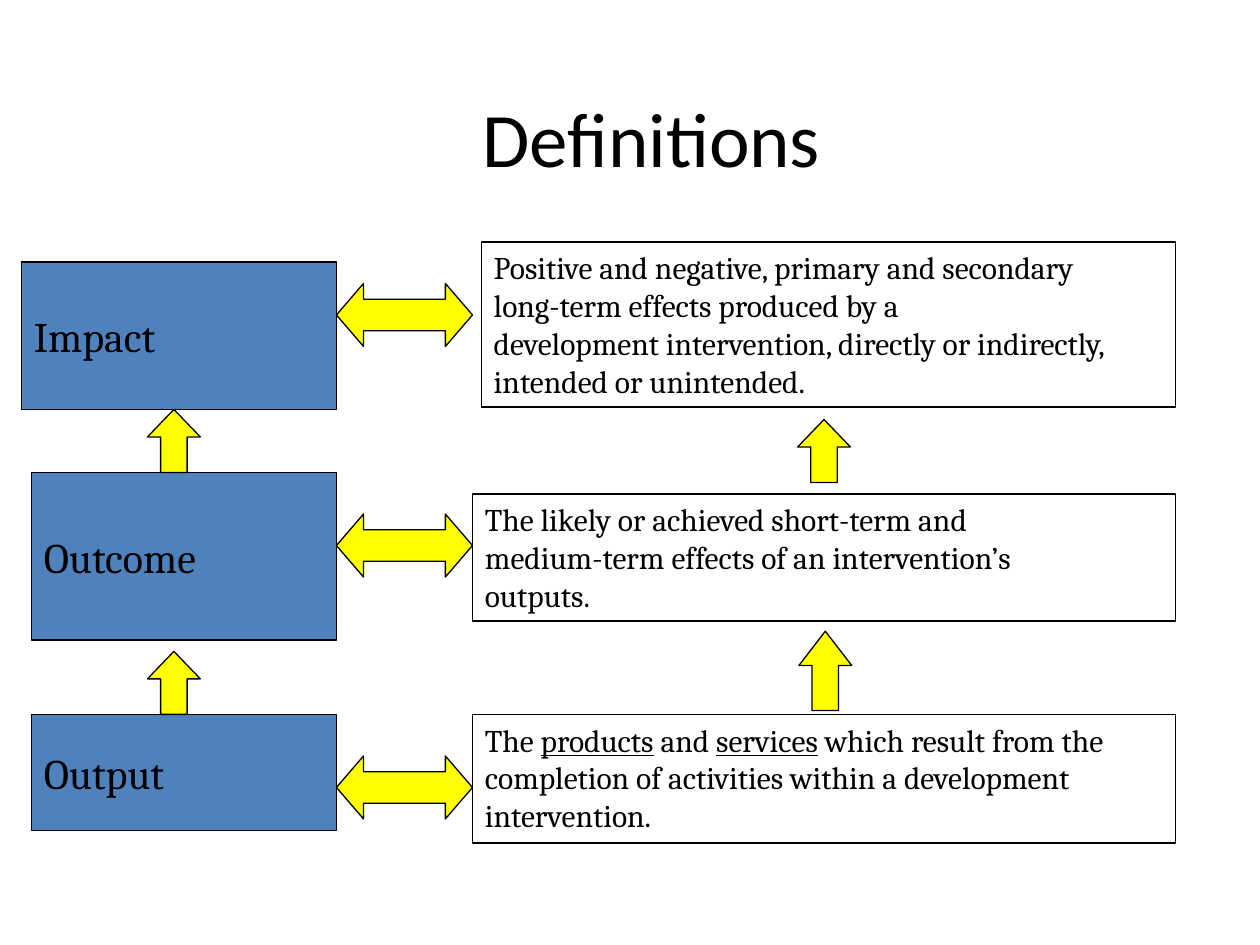
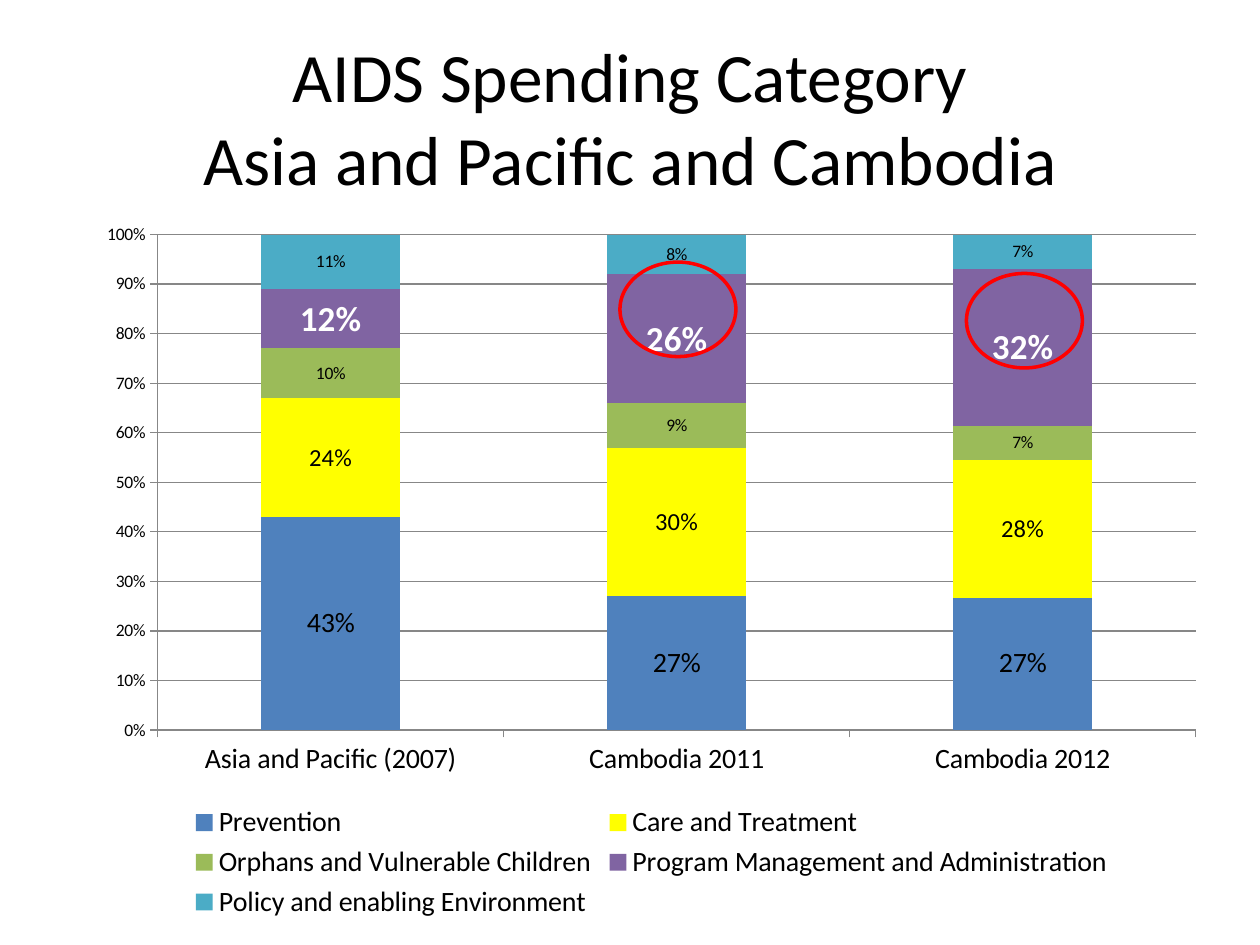
from pptx import Presentation
from pptx.chart.data import CategoryChartData
from pptx.dml.color import RGBColor
from pptx.enum.chart import XL_CHART_TYPE, XL_LEGEND_POSITION, XL_TICK_MARK
from pptx.enum.shapes import MSO_SHAPE
from pptx.enum.text import MSO_ANCHOR, MSO_AUTO_SIZE, PP_ALIGN
from pptx.util import Pt

PX = 9144
HEX = {
    "black": "000000", "white": "FFFFFF", "blue": "4F81BD",
    "yellow": "FFFF00", "green": "9BBB59", "purple": "8064A2",
    "teal": "4BACC6", "red": "FF0000", "grey": "878787",
}
RGB = {name: RGBColor.from_string(code) for name, code in HEX.items()}

deck = Presentation()
deck.slide_width, deck.slide_height = 1000 * PX, 750 * PX


def start(text, box, size):
    slide = deck.slides.add_slide(deck.slide_layouts[5])
    title = slide.shapes.title
    title.left, title.top, title.width, title.height = [n * PX for n in box]
    frame = title.text_frame
    frame.text = text
    frame.word_wrap = True
    frame.auto_size = MSO_AUTO_SIZE.NONE
    frame.vertical_anchor = MSO_ANCHOR.MIDDLE
    for para in frame.paragraphs:
        para.alignment = PP_ALIGN.CENTER
        for run in para.runs:
            run.font.size = Pt(size)
            run.font.name = "Calibri"
            run.font.color.rgb = RGB["black"]
    return slide


def draw(slide, kind, box, fill, line="black", width=0.75, text="", size=18):
    shape = slide.shapes.add_shape(kind, *[n * PX for n in box])
    shape.shadow.inherit = False
    if fill:
        shape.fill.solid()
        shape.fill.fore_color.rgb = RGB[fill]
    else:
        shape.fill.background()
    shape.line.color.rgb = RGB[line]
    shape.line.width = Pt(width)
    frame = shape.text_frame
    for row, words in enumerate(text.split("\n") if text else []):
        para = frame.add_paragraph() if row else frame.paragraphs[0]
        para.alignment = PP_ALIGN.LEFT
        for part, piece in enumerate(words.split("_")):
            run = para.add_run()
            run.text = piece
            run.font.size = Pt(size)
            run.font.name = "Cambria"
            run.font.color.rgb = RGB["black"]
            if part % 2:
                run.font.underline = True
    return shape


slide = start("Definitions", (92, 67, 850, 83), 44)

notes = [
    ((382, 192, 551, 131), 0.75,
     "Positive and negative, primary and secondary\n"
     "long-term effects produced by a\n"
     "development intervention, directly or indirectly,\n"
     "intended or unintended."),
    ((375, 392, 558, 101), 0.75,
     "The likely or achieved short-term and\n"
     "medium-term effects of an intervention’s\n"
     "outputs."),
    ((375, 567, 558, 102), 1,
     "The _products_ and _services_ which result from the "
     "completion of activities within a development intervention."),
]
for box, width, text in notes:
    note = draw(slide, MSO_SHAPE.RECTANGLE, box, "white", width=width, text=text)
    note.text_frame.word_wrap = True
    note.text_frame.vertical_anchor = MSO_ANCHOR.TOP

levels = [
    ("Impact", (17, 208, 250, 117)),
    ("Outcome", (25, 375, 242, 133)),
    ("Output", (25, 567, 242, 92)),
]
for text, box in levels:
    level = draw(slide, MSO_SHAPE.RECTANGLE, box, "blue", text=text, size=24)
    level.text_frame.word_wrap = False
    level.text_frame.vertical_anchor = MSO_ANCHOR.MIDDLE

for top in (225, 408, 600):
    link = draw(slide, MSO_SHAPE.LEFT_RIGHT_ARROW, (267, top, 108, 50), "yellow")
    link.adjustments[1] = 0.43

for left, top, high, head in [
    (117, 325, 50, 0.52), (117, 517, 50, 0.52),
    (633, 333, 50, 0.52), (634, 501, 63, 0.65),
]:
    rise = draw(slide, MSO_SHAPE.UP_ARROW, (left, top, 42, high), "yellow")
    rise.adjustments[1] = head

slide = start("AIDS Spending Category\vAsia and Pacific and Cambodia",
              (50, 30, 900, 125), 39.6)

spend = [
    ("Prevention", (0.43, 0.27, 0.27), "blue", 16),
    ("Care and Treatment", (0.24, 0.30, 0.28), "yellow", 14),
    ("Orphans and Vulnerable Children", (0.10, 0.09, 0.07), "green", 10),
    ("Program Management and Administration", (0.12, 0.26, 0.32), "purple", 20),
    ("Policy and enabling Environment", (0.11, 0.08, 0.07), "teal", 10),
]
data = CategoryChartData(number_format="0%")
data.categories = ["Asia and Pacific (2007)", "Cambodia 2011", "Cambodia 2012"]
for name, vals, fill, size in spend:
    data.add_series(name, vals)

chart = slide.shapes.add_chart(
    XL_CHART_TYPE.COLUMN_STACKED_100,
    *[n * PX for n in (67, 167, 900, 567)], data).chart
chart.has_title = False
chart.font.name = "Calibri"
chart.font.size = Pt(10)
chart.font.color.rgb = RGB["black"]

plot = chart.plots[0]
plot.gap_width = 150
plot.overlap = 100
plot.vary_by_categories = False
for series, (name, vals, fill, size) in zip(plot.series, spend):
    series.format.fill.solid()
    series.format.fill.fore_color.rgb = RGB[fill]
    labels = series.data_labels
    labels.show_value = True
    labels.number_format = "0%"
    labels.number_format_is_linked = False
    strong = fill == "purple"
    labels.font.size = Pt(size)
    labels.font.bold = strong
    labels.font.color.rgb = RGB["white" if strong else "black"]

for axis, size in [(chart.category_axis, 16), (chart.value_axis, 10)]:
    axis.major_tick_mark = XL_TICK_MARK.OUTSIDE
    axis.minor_tick_mark = XL_TICK_MARK.NONE
    axis.tick_labels.font.size = Pt(size)
    axis.format.line.color.rgb = RGB["grey"]
scale = chart.value_axis
scale.maximum_scale = 1
scale.minimum_scale = 0
scale.major_unit = 0.1
scale.tick_labels.number_format = "0%"
scale.tick_labels.number_format_is_linked = False
scale.has_major_gridlines = True
scale.major_gridlines.format.line.color.rgb = RGB["grey"]

chart.has_legend = True
chart.legend.position = XL_LEGEND_POSITION.BOTTOM
chart.legend.include_in_layout = False
chart.legend.font.size = Pt(16)

for left, top in [(492, 208), (767, 217)]:
    draw(slide, MSO_SHAPE.OVAL, (left, top, 92, 75), None, "red", 2)

deck.save("out.pptx")
